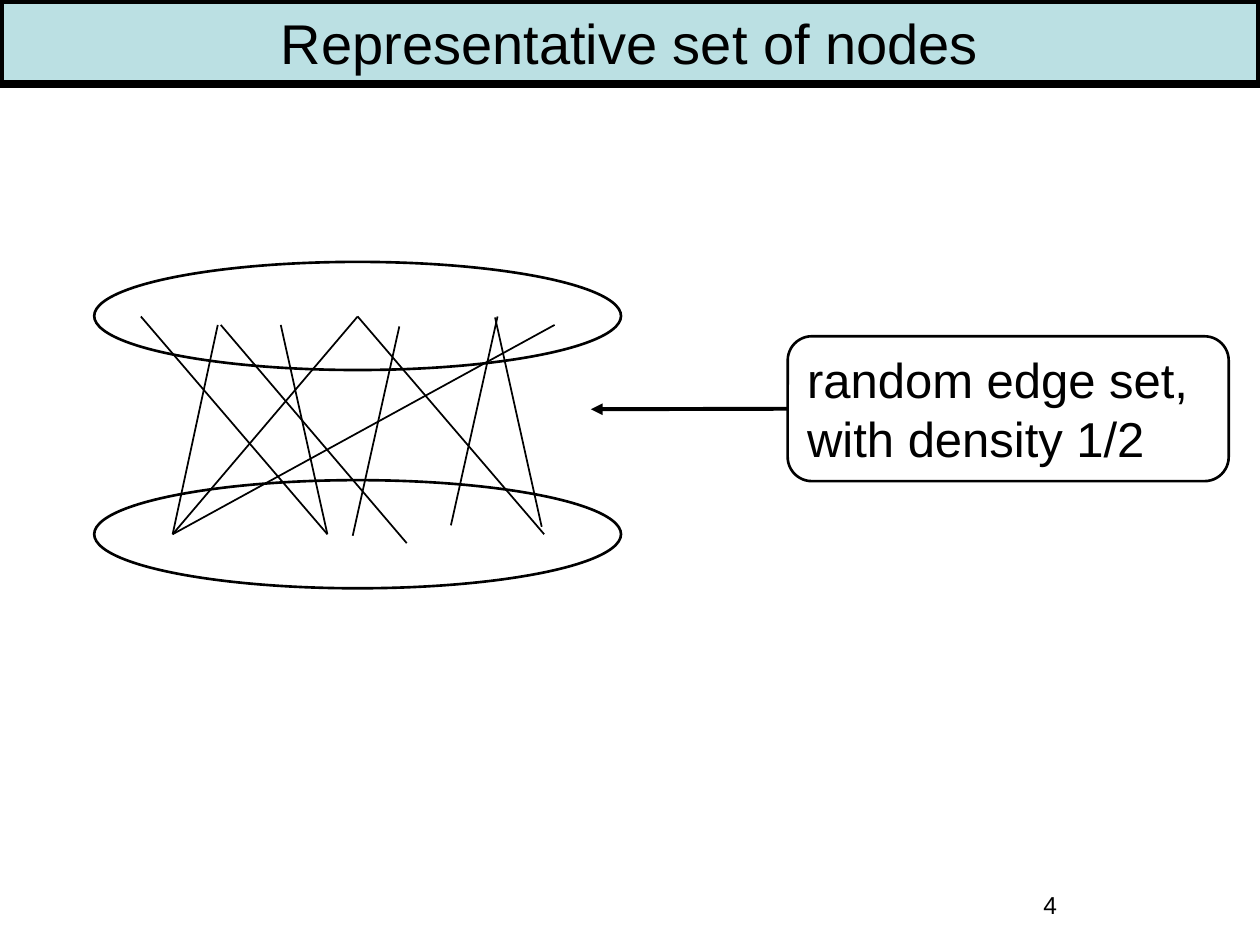
import typing

import lxml.etree
import pptx
import pptx.dml.color
import pptx.enum.shapes
import pptx.enum.text
import pptx.oxml.ns
import pptx.util

Cm = pptx.util.Cm
Pt = pptx.util.Pt
Shape = pptx.enum.shapes.MSO_SHAPE
Align = pptx.enum.text.PP_ALIGN

COLORS = {"ink": "000000", "title_fill": "BBE0E3"}
FONT = "Arial"


class Point(typing.NamedTuple):
    x: float
    y: float


class Area(typing.NamedTuple):
    left: float
    top: float
    width: float
    height: float

    def lengths(self) -> list:
        return [Cm(value) for value in self]


class Edge(typing.NamedTuple):
    upper: Point
    lower: Point


TITLE_AREA = Area(0, 0, 25.4, 1.7)
NOTE_AREA = Area(15.88, 6.78, 8.89, 2.92)
NUMBER_AREA = Area(18.21, 17.35, 5.92, 1.32)
NODE_SETS = [Area(1.9, top, 10.62, 2.18) for top in (5.28, 9.68)]

UPPER_CENTER = Point(7.21, 6.38)
LOWER_LEFT = Point(3.48, 10.77)
LOWER_MIDDLE = Point(6.6, 10.77)
EDGES = [
    Edge(Point(2.84, 6.38), LOWER_MIDDLE),
    Edge(UPPER_CENTER, Point(10.97, 10.77)),
    Edge(UPPER_CENTER, LOWER_LEFT),
    Edge(Point(5.66, 6.55), LOWER_MIDDLE),
    Edge(Point(9.98, 6.4), Point(10.92, 10.62)),
    Edge(Point(10.03, 6.38), Point(9.09, 10.59)),
    Edge(Point(4.39, 6.55), LOWER_LEFT),
    Edge(Point(4.45, 6.55), Point(8.2, 10.95)),
    Edge(Point(8.05, 6.58), Point(7.11, 10.8)),
    Edge(Point(11.18, 6.55), LOWER_LEFT),
]
ARROW = Edge(Point(15.88, 8.24), Point(11.91, 8.25))


def color(name: str) -> pptx.dml.color.RGBColor:
    return pptx.dml.color.RGBColor.from_string(COLORS[name])


def add_outlined(slide, kind, area: Area, line_width: float, fill: str | None = None):
    shape = slide.shapes.add_shape(kind, *area.lengths())
    shape.shadow.inherit = False
    if fill:
        shape.fill.solid()
        shape.fill.fore_color.rgb = color(fill)
    else:
        shape.fill.background()
    shape.line.color.rgb = color("ink")
    shape.line.width = Pt(line_width)
    return shape


def write(shape, text: str, size: float, align: Align):
    shape.text_frame.word_wrap = True
    para = shape.text_frame.paragraphs[0]
    para.alignment = align
    span = para.add_run()
    span.text = text
    span.font.name = FONT
    span.font.size = Pt(size)
    span.font.color.rgb = color("ink")
    return para


def add_edge(slide, edge: Edge, line_width: float):
    ends = [Cm(value) for point in edge for value in point]
    line = slide.shapes.add_connector(pptx.enum.shapes.MSO_CONNECTOR.STRAIGHT, *ends)
    line.line.color.rgb = color("ink")
    line.line.width = Pt(line_width)
    properties = line._element.spPr
    lxml.etree.SubElement(properties, pptx.oxml.ns.qn("a:effectLst"))
    return line


def add_arrow(slide, source):
    """Point from the left side of the source box to the edge set."""
    arrow = add_edge(slide, ARROW, 2.25)
    arrow.begin_connect(source, 1)
    outline = arrow.line._get_or_add_ln()
    lxml.etree.SubElement(outline, pptx.oxml.ns.qn("a:tailEnd"), type="triangle")


def main():
    deck = pptx.Presentation()
    deck.slide_width, deck.slide_height = Cm(25.4), Cm(19.05)
    slide = deck.slides.add_slide(deck.slide_layouts[6])

    number = slide.shapes.add_textbox(*NUMBER_AREA.lengths())
    write(number, "4", 14, Align.CENTER).line_spacing = 1.8

    title = add_outlined(slide, Shape.RECTANGLE, TITLE_AREA, 4.5, "title_fill")
    write(title, "Representative set of nodes", 32, Align.CENTER)

    for area in NODE_SETS:
        add_outlined(slide, Shape.OVAL, area, 1.5)
    for edge in EDGES:
        add_edge(slide, edge, 1)

    note = add_outlined(slide, Shape.ROUNDED_RECTANGLE, NOTE_AREA, 1.5)
    write(note, "random edge set, with density 1/2", 28, Align.LEFT)
    add_arrow(slide, note)

    deck.save("out.pptx")


if __name__ == "__main__":
    main()
